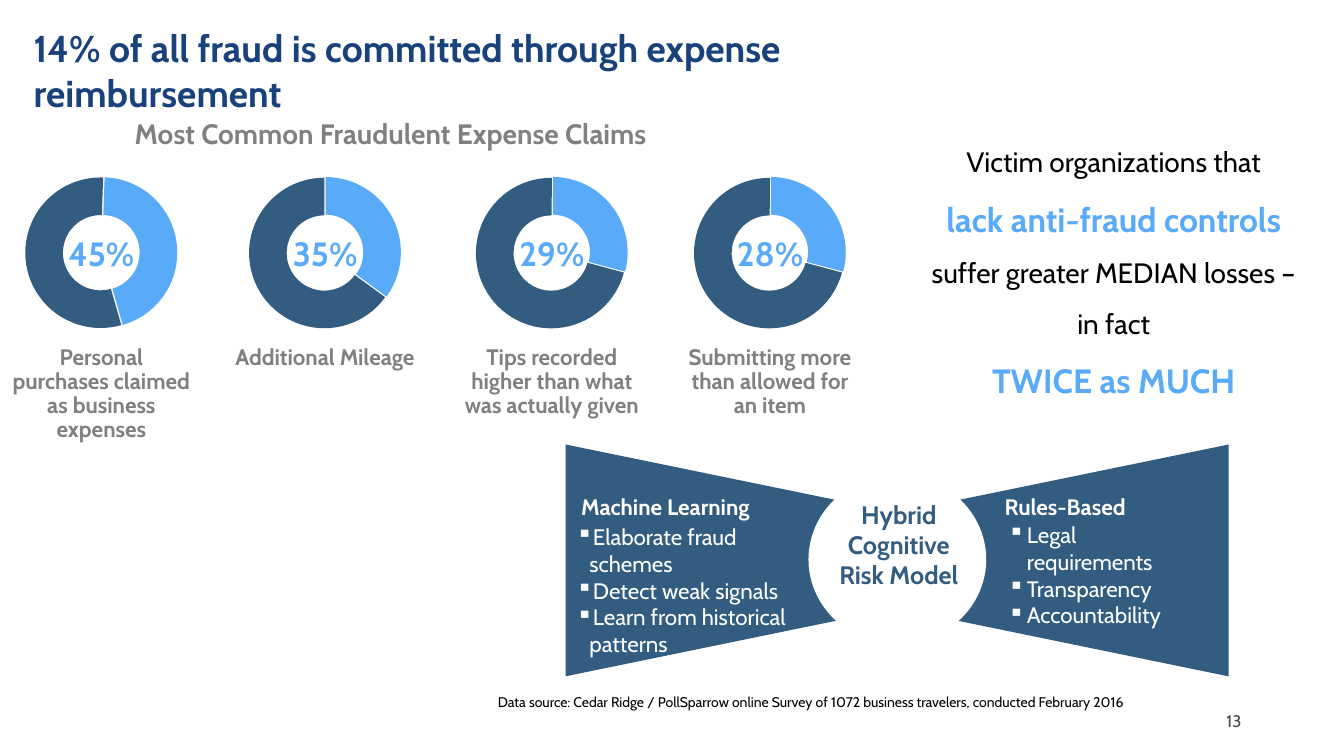
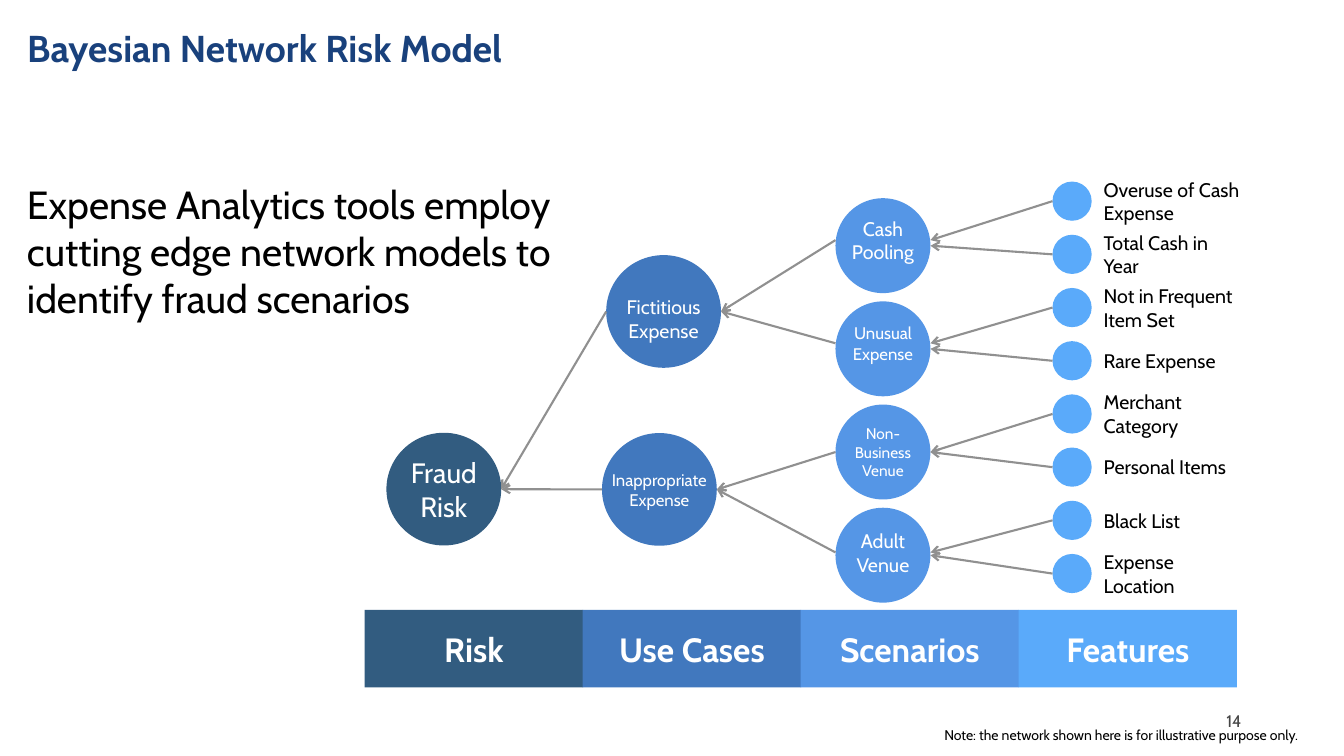
from dataclasses import dataclass

from lxml.etree import SubElement
from pptx import Presentation
from pptx.chart.data import CategoryChartData
from pptx.dml.color import RGBColor
from pptx.enum.chart import XL_CHART_TYPE as ChartType
from pptx.enum.shapes import MSO_CONNECTOR as Connector
from pptx.enum.shapes import MSO_SHAPE as Shape
from pptx.enum.text import MSO_ANCHOR as Anchor
from pptx.enum.text import PP_ALIGN as Align
from pptx.oxml import parse_xml
from pptx.oxml.ns import nsdecls, qn
from pptx.util import Pt


@dataclass(frozen=True)
class Theme:
    font: str = "Cabin"
    chart_font: str = "Calibri"
    heading: RGBColor = RGBColor(0x19, 0x41, 0x7C)
    black: RGBColor = RGBColor(0, 0, 0)
    white: RGBColor = RGBColor(255, 255, 255)
    grey: RGBColor = RGBColor(0x80, 0x80, 0x80)
    page: RGBColor = RGBColor(0x46, 0x46, 0x46)
    arrow: RGBColor = RGBColor(0x90, 0x90, 0x90)
    navy: RGBColor = RGBColor(0x32, 0x5C, 0x80)
    blue: RGBColor = RGBColor(0x41, 0x78, 0xBE)
    azure: RGBColor = RGBColor(0x55, 0x96, 0xE6)
    sky: RGBColor = RGBColor(0x5A, 0xAA, 0xFA)
    title_size: float = 26.7
    body_size: float = 28
    strong_size: float = 24
    lead_size: float = 20
    model_size: float = 18
    text_size: float = 16
    label_size: float = 14
    small_size: float = 12
    tiny_size: float = 11
    note_size: float = 10


THEME = Theme()


class Deck:
    def __init__(self, theme):
        self.theme = theme
        self.file = Presentation()
        self.file.slide_width, self.file.slide_height = Pt(960), Pt(540)
        self.slide = None

    def new_slide(self, number, title, left, width):
        self.slide = self.file.slides.add_slide(self.file.slide_layouts[6])
        t = self.theme
        self.text(title, left, 18, width, 96, t.title_size, t.heading, bold=True, inset=False)
        self.text(str(number), 678, 500, 216, 29, t.small_size, t.page,
                  align=Align.RIGHT, anchor=Anchor.MIDDLE)

    def style(self, paragraph, size, color, bold=False):
        for run in paragraph.runs:
            font = run.font
            font.name, font.size, font.bold = self.theme.font, Pt(size), bold
            font.color.rgb = color

    def fill_frame(self, frame, content, size, color, bold, align, anchor, inset):
        frame.text = content
        frame.word_wrap = True
        frame.vertical_anchor = anchor
        if not inset:
            frame.margin_left = frame.margin_right = frame.margin_top = frame.margin_bottom = 0
        for paragraph in frame.paragraphs:
            paragraph.alignment = align
            self.style(paragraph, size, color, bold)

    def text(self, content, left, top, width, height, size, color, bold=False,
             align=Align.LEFT, anchor=Anchor.TOP, inset=True):
        box = self.slide.shapes.add_textbox(Pt(left), Pt(top), Pt(width), Pt(height))
        self.fill_frame(box.text_frame, content, size, color, bold, align, anchor, inset)
        return box.text_frame.paragraphs

    def label(self, content, left, top, width, height, size, color, anchor=Anchor.TOP):
        for paragraph in self.text(content, left, top, width, height, size, color,
                                   True, Align.CENTER, anchor, False):
            paragraph.line_spacing = 0.9
            paragraph.space_before = Pt(2.7)

    def bullets(self, items, left, top, width, height, indent):
        t = self.theme
        for paragraph in self.text("\n".join(items), left, top, width, height,
                                   t.text_size, t.white):
            props = paragraph._p.get_or_add_pPr()
            props.set("marL", str(Pt(indent)))
            props.set("indent", str(-Pt(indent)))
            SubElement(props, qn("a:buChar"), char="▪")

    def shape(self, kind, left, top, width, height, color, rotation=0):
        shape = self.slide.shapes.add_shape(kind, Pt(left), Pt(top), Pt(width), Pt(height))
        shape.shadow.inherit = False
        shape.fill.solid()
        shape.fill.fore_color.rgb = color
        shape.line.fill.background()
        shape.rotation = rotation
        return shape

    def circle(self, x, y, width, height, color):
        self.shape(Shape.OVAL, x - width / 2, y - height / 2, width, height, color)

    def node(self, content, x, y, width, height, color, size, text_width, lift=0):
        self.circle(x, y, width, height, color)
        self.text(content, x - text_width / 2, y - lift - 28, text_width, 56, size,
                  self.theme.white, align=Align.CENTER, anchor=Anchor.MIDDLE)

    def band(self, content, left, top, width, height, color):
        band = self.shape(Shape.RECTANGLE, left, top, width, height, color)
        self.fill_frame(band.text_frame, content, self.theme.strong_size, self.theme.white,
                        True, Align.CENTER, Anchor.MIDDLE, False)

    def arrow(self, start, end):
        link = self.slide.shapes.add_connector(
            Connector.STRAIGHT, *(Pt(value) for value in (*start, *end)))
        link.line.color.rgb = self.theme.arrow
        link.line.width = Pt(1.5)
        props = link.element.spPr
        SubElement(props.find(qn("a:ln")), qn("a:tailEnd"), type="arrow")
        SubElement(props, qn("a:effectLst"))

    def doughnut(self, x, top, width, height, share, angle):
        data = CategoryChartData()
        data.categories = ["1", "2"]
        data.add_series("Series 1", (100 - share, share))
        chart = self.slide.shapes.add_chart(
            ChartType.DOUGHNUT, Pt(x - width / 2), Pt(top), Pt(width), Pt(height), data).chart
        chart.has_legend = chart.has_title = False
        chart.font.name, chart.font.size = self.theme.chart_font, Pt(18)
        chart.font.color.rgb = self.theme.black
        plot = chart.plots[0]
        plot.vary_by_categories = False
        series = plot.series[0]
        for index, color in enumerate((self.theme.navy, self.theme.sky)):
            slice_format = series.points[index].format
            slice_format.fill.solid()
            slice_format.fill.fore_color.rgb = color
            slice_format.line.fill.background()
        root = chart.element
        root.find(".//" + qn("c:firstSliceAng")).set("val", str(angle))
        root.find(".//" + qn("c:holeSize")).set("val", "70")
        root.find(".//" + qn("c:ser")).find(qn("c:tx")).addnext(
            parse_xml(f'<c:explosion {nsdecls("c")} val="2"/>'))
        area = root.find(".//" + qn("c:plotArea"))
        for old in area.findall(qn("c:layout")):
            area.remove(old)
        frame = "".join(f'<c:{name} val="{value}"/>' for name, value in (
            ("layoutTarget", "inner"), ("xMode", "edge"), ("yMode", "edge"),
            ("x", 0.12), ("y", 0.07), ("w", 0.76), ("h", 0.86)))
        area.insert(0, parse_xml(
            f'<c:layout {nsdecls("c")}><c:manualLayout>{frame}</c:manualLayout></c:layout>'))


def build_claims(deck):
    t = deck.theme
    deck.new_slide(13, "14% of all fraud is committed through expense reimbursement", 24, 686)

    message = deck.text(
        "Victim organizations that\nlack anti-fraud controls\n"
        "suffer greater MEDIAN losses –\nin fact\nTWICE as MUCH",
        638, 88, 315, 204, t.lead_size, t.black, align=Align.CENTER)
    for paragraph in message:
        paragraph.line_spacing = 1.5
    for emphasis in (message[1], message[4]):
        deck.style(emphasis, t.strong_size, t.sky, True)

    deck.label("Most Common Fraudulent Expense Claims", 75.6, 85.7, 407, 21, t.lead_size, t.grey)
    claims = (
        (72.4, "45%", 45, 164, "Personal purchases claimed as business expenses"),
        (232.2, "35%", 35, 126, "Additional Mileage"),
        (394.2, "29%", 29, 105, "Tips recorded higher than what was actually given"),
        (550, "28%", 29, 105, "Submitting more than allowed for an item"),
    )
    for x, percent, share, angle, caption in claims:
        deck.doughnut(x, 117, 143, 127, share, angle)
        deck.label(caption, x - 65, 247, 130, 72, t.text_size, t.grey)
        deck.label(percent, x - 37.5, 168, 75, 29, t.strong_size, t.sky, Anchor.MIDDLE)

    deck.text("Data source: Cedar Ridge / PollSparrow online Survey of 1072 business travelers, "
              "conducted February 2016", 307, 492, 544, 19, t.note_size, t.black,
              align=Align.CENTER)

    for left, rotation in ((694, 270), (422, 90)):
        deck.shape(Shape.TRAPEZOID, left, 299.5, 165.6, 201.6, t.navy, rotation)
    deck.circle(641, 399.6, 127, 121, t.white)
    for heading, left in (("Machine Learning", 408), ("Rules-Based", 710.6)):
        deck.text(heading, left, 349, 147, 27, t.text_size, t.white, bold=True)
    deck.bullets(("Elaborate fraud schemes", "Detect weak signals", "Learn from historical patterns"),
                 404.6, 370, 185, 104, 9.4)
    deck.bullets(("Legal requirements", "Transparency", "Accountability"),
                 713, 368.6, 150, 85, 13.5)
    deck.text("Hybrid Cognitive Risk Model", 590, 353, 104, 94, t.model_size, t.navy,
              bold=True, align=Align.CENTER)


def build_network(deck):
    t = deck.theme
    deck.new_slide(14, "Bayesian Network Risk Model", 19.4, 466)
    levels = (("Risk", t.navy), ("Use Cases", t.blue), ("Scenarios", t.azure), ("Features", t.sky))
    for column, (level, color) in enumerate(levels):
        deck.band(level, 260.5 + 155.7 * column, 435.6, 156, 55.4, color)

    hub_width, hub_height, scenario_size, feature_size = 82, 80.5, 67.8, 28
    risk_x, risk_y = 317, 349.4
    scenario_x, feature_x = 630.7, 765.8
    use_cases = (
        ("Fictitious Expense", 474, 222.5, t.label_size, -5),
        ("Inappropriate Expense", 471, 349.6, t.small_size, 0),
    )
    scenarios = (
        ("Cash Pooling", t.label_size, 4),
        ("Unusual Expense", t.small_size, 4),
        ("Non-Business\nVenue", t.tiny_size, 0),
        ("Adult Venue", t.label_size, 2),
    )
    features = ("Overuse of Cash Expense", "Total Cash in Year", "Not in Frequent Item Set",
                "Rare Expense", "Merchant Category", "Personal Items", "Black List",
                "Expense Location")

    deck.node("Fraud Risk", risk_x, risk_y, hub_width, hub_height, t.navy, t.lead_size, 68.4)
    for use_case, x, y, size, lift in use_cases:
        deck.node(use_case, x, y, hub_width, hub_height, t.blue, size, 91, lift)
        deck.arrow((x - hub_width / 2, y), (risk_x + hub_width / 2, risk_y))

    scenario_ys = [175.5 + 73.7 * row for row in range(len(scenarios))]
    for row, (scenario, size, lift) in enumerate(scenarios):
        y = scenario_ys[row]
        deck.node(scenario, scenario_x, y, scenario_size, scenario_size, t.azure, size, 68, lift)
        _, x, use_case_y, _, _ = use_cases[row // 2]
        deck.arrow((scenario_x - scenario_size / 2, y - lift), (x + hub_width / 2, use_case_y))

    for row, feature in enumerate(features):
        y = 143.7 + 38 * row
        deck.circle(feature_x, y, feature_size, feature_size, t.sky)
        deck.text(feature, 781.2, y - 20.5, 114, 41, t.label_size, t.black, anchor=Anchor.MIDDLE)
        lift = 0 if row % 2 else scenarios[row // 2][2]
        deck.arrow((feature_x - feature_size / 2, y),
                   (scenario_x + scenario_size / 2, scenario_ys[row // 2] - lift))

    deck.text("Note: the network shown here is for illustrative purpose only.",
              667.4, 515.5, 292, 19, t.note_size, t.black)
    deck.text("Expense Analytics tools employ cutting edge network models to identify fraud scenarios",
              12.2, 125.3, 460, 109, t.body_size, t.black)


def main():
    deck = Deck(THEME)
    build_claims(deck)
    build_network(deck)
    deck.file.save("out.pptx")


if __name__ == "__main__":
    main()
